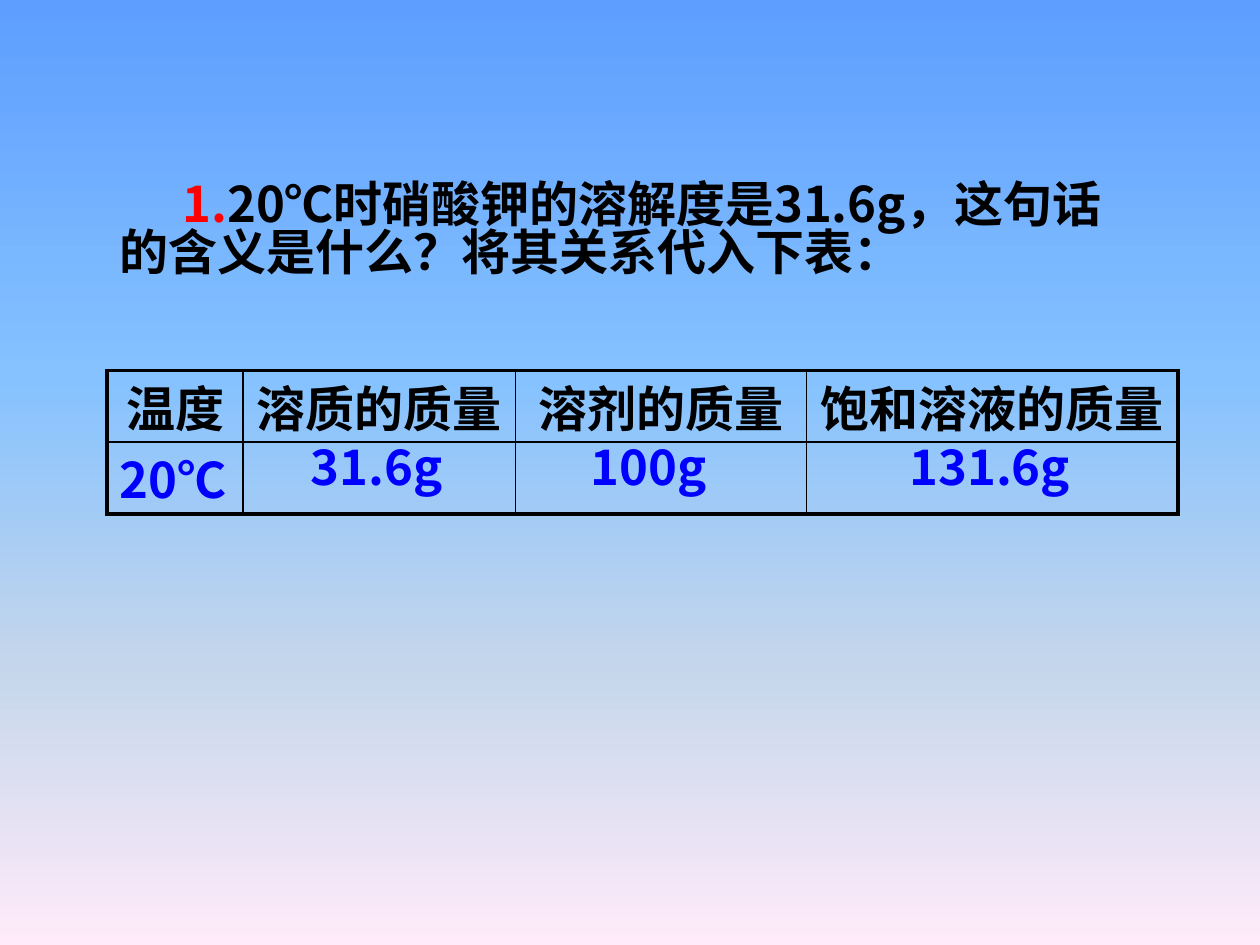
from lxml import etree
from pptx import Presentation
from pptx import util as u
from pptx.dml.color import RGBColor
from pptx.enum import text
from pptx.oxml import ns

BLACK = RGBColor(0x00, 0x00, 0x00)
BLUE = RGBColor(0x00, 0x00, 0xFF)
RED = RGBColor(0xFF, 0x00, 0x00)
SKY = [
    (0, RGBColor(0x5E, 0x9E, 0xFF)),
    (40, RGBColor(0x85, 0xC2, 0xFF)),
    (70, RGBColor(0xC4, 0xD6, 0xEB)),
    (100, RGBColor(0xFF, 0xEB, 0xFA)),
]


def add_color(parent, color):
    etree.SubElement(parent, ns.qn("a:srgbClr"), val=str(color))


class SlideBuilder:
    font_name = "Noto Sans CJK SC"
    font_size = u.Pt(28)
    line_spacing = 0.82
    thin = u.Pt(1)
    thick = u.Pt(2.25)

    def __init__(self, slide):
        self.slide = slide

    def style(self, font, color=None):
        font.name = self.font_name
        font.size = self.font_size
        font.bold = True
        if color is not None:
            font.color.rgb = color
        fonts = font._element.get_or_add_rPr() if hasattr(font._element, "get_or_add_rPr") else font._rPr
        latin = fonts.find(ns.qn("a:latin"))
        east_asian = etree.Element(ns.qn("a:ea"), typeface=self.font_name)
        latin.addnext(east_asian)

    def background(self, colors):
        fill = self.slide.background.fill
        fill.gradient()
        fill.gradient_angle = 270
        stops = fill.gradient_stops._gsLst
        for stop in list(stops):
            stops.remove(stop)
        for position, color in colors:
            stop = etree.SubElement(stops, ns.qn("a:gs"), pos=str(position * 1000))
            add_color(stop, color)

    def text_box(self, left, top, width, height, runs, indent=0):
        box = self.slide.shapes.add_textbox(
            u.Inches(left), u.Inches(top), u.Inches(width), u.Inches(height))
        box.text_frame.word_wrap = True
        paragraph = box.text_frame.paragraphs[0]
        paragraph.line_spacing = self.line_spacing
        paragraph._p.get_or_add_pPr().set("indent", str(u.Inches(indent)))
        for words, color in runs:
            run = paragraph.add_run()
            run.text = words
            self.style(run.font, color)

    def border(self, cell, widths):
        properties = cell._tc.get_or_add_tcPr()
        for index, (side, width) in enumerate(widths.items()):
            line = etree.Element(ns.qn(f"a:ln{side}"), w=str(width))
            add_color(etree.SubElement(line, ns.qn("a:solidFill")), BLACK)
            properties.insert(index, line)

    def table(self, left, top, widths, row_height, rows):
        table = self.slide.shapes.add_table(
            len(rows), len(widths), u.Inches(left), u.Inches(top),
            u.Inches(sum(widths)), u.Inches(row_height * len(rows))).table
        for column, width in zip(table.columns, widths):
            column.width = u.Inches(width)
        for r, (values, color, alignment) in enumerate(rows):
            for c, value in enumerate(values):
                cell = table.cell(r, c)
                cell.margin_top = cell.margin_bottom = 0
                cell.fill.background()
                paragraph = cell.text_frame.paragraphs[0]
                paragraph.text = value
                paragraph.alignment = alignment
                self.style(paragraph.font, color)
                edges = {"L": c == 0, "R": c == len(widths) - 1,
                         "T": r == 0, "B": r == len(rows) - 1}
                self.border(cell, {side: self.thick if outer else self.thin
                                   for side, outer in edges.items()})


def main():
    presentation = Presentation()
    presentation.slide_width = u.Inches(10)
    presentation.slide_height = u.Inches(7.5)
    builder = SlideBuilder(presentation.slides.add_slide(presentation.slide_layouts[6]))
    builder.background(SKY)
    builder.table(0.85, 2.94, [1.08, 2.16, 2.31, 2.95], 0.57, [
        (["温度", "溶质的质量", "溶剂的质量", "饱和溶液的质量"], BLACK, text.PP_ALIGN.CENTER),
        (["20℃", "", "", ""], BLUE, text.PP_ALIGN.LEFT),
    ])
    for left, width, mass in [(2.37, 1.26, "31.6g"), (4.59, 1.26, "100g"), (7.12, 1.74, "131.6g")]:
        builder.text_box(left, 3.5, width, 0.57, [(mass, BLUE)])
    builder.text_box(0.85, 1.41, 8.3, 1.04, [
        ("1.", RED),
        ("20℃时硝酸钾的溶解度是31.6g，这句话的含义是什么？将其关系代入下表：", BLACK),
    ], indent=0.5)
    presentation.save("out.pptx")


if __name__ == "__main__":
    main()
